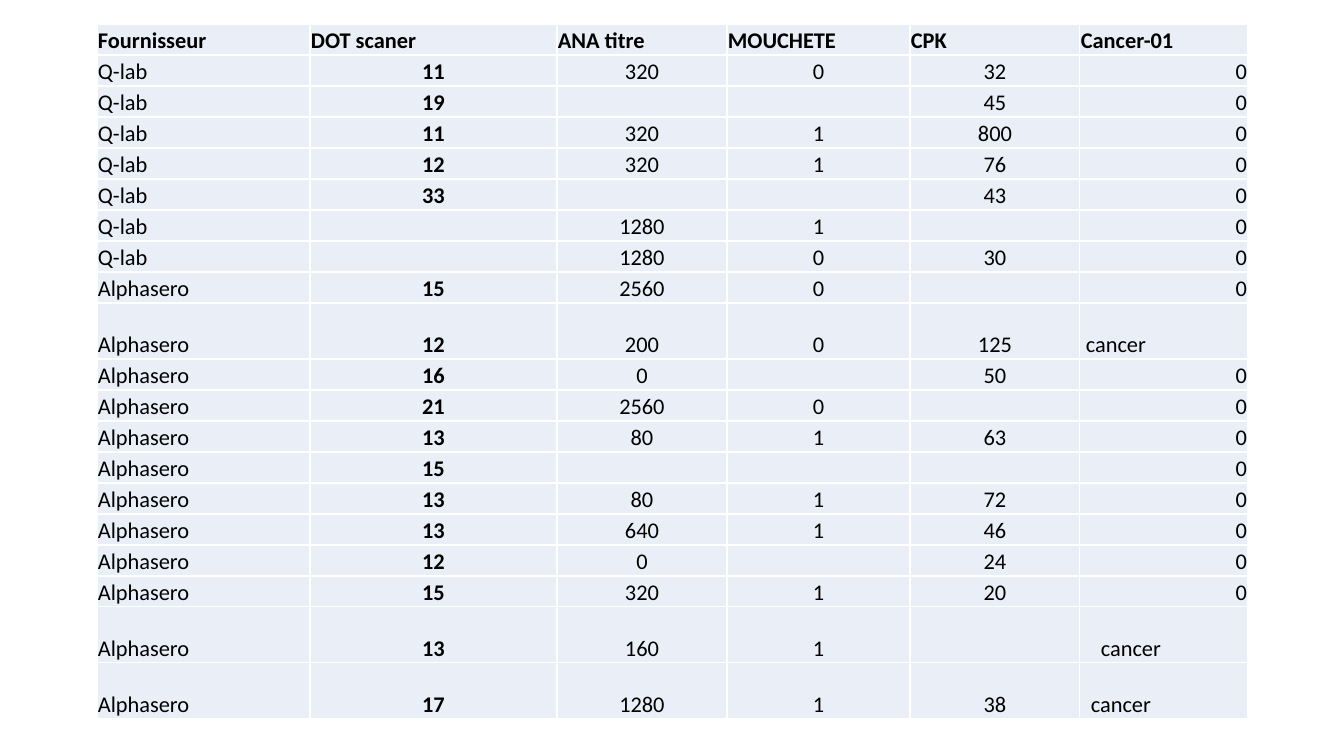
import lxml.etree
import pptx
import pptx.dml.color
import pptx.enum.text
import pptx.oxml.ns
import pptx.util

PX = 914400 / 100.8
BLACK = pptx.dml.color.RGBColor(0, 0, 0)
WHITE = pptx.dml.color.RGBColor(255, 255, 255)
PALE = pptx.dml.color.RGBColor(0xEA, 0xEF, 0xF7)
ALIGN = pptx.enum.text.PP_ALIGN
SIZE = 16

COLS = [213, 247, 170, 183, 170, 168]
LOW, TALL = 31, 56
INDENT = {9: 6, 18: 21, 19: 11}
HEAD = ["Fournisseur", "DOT scaner", "ANA titre", "MOUCHETE", "CPK", "Cancer-01"]
FIRST, SECOND = "Q-lab", "Alphasero"
DATA = [
    [FIRST, "11", "320", "0", "32", "0"],
    [FIRST, "19", "", "", "45", "0"],
    [FIRST, "11", "320", "1", "800", "0"],
    [FIRST, "12", "320", "1", "76", "0"],
    [FIRST, "33", "", "", "43", "0"],
    [FIRST, "", "1280", "1", "", "0"],
    [FIRST, "", "1280", "0", "30", "0"],
    [SECOND, "15", "2560", "0", "", "0"],
    [SECOND, "12", "200", "0", "125", "cancer"],
    [SECOND, "16", "0", "", "50", "0"],
    [SECOND, "21", "2560", "0", "", "0"],
    [SECOND, "13", "80", "1", "63", "0"],
    [SECOND, "15", "", "", "", "0"],
    [SECOND, "13", "80", "1", "72", "0"],
    [SECOND, "13", "640", "1", "46", "0"],
    [SECOND, "12", "0", "", "24", "0"],
    [SECOND, "15", "320", "1", "20", "0"],
    [SECOND, "13", "160", "1", "", "cancer"],
    [SECOND, "17", "1280", "1", "38", "cancer"],
]


def emu(px):
    """Turn pixels into EMU."""
    return pptx.util.Emu(round(px * PX))


def sub(node, tag, **attrs):
    """Append a child element to a node."""
    return lxml.etree.SubElement(node, pptx.oxml.ns.qn(tag), **attrs)


def frame(cell):
    """Give a cell its white borders, pale fill and narrow margins."""
    props = cell._tc.get_or_add_tcPr()
    for side in ("a:lnL", "a:lnR", "a:lnT", "a:lnB"):
        line = sub(props, side, w=str(pptx.util.Pt(1)))
        sub(sub(line, "a:solidFill"), "a:srgbClr", val=str(WHITE))
    cell.fill.solid()
    cell.fill.fore_color.rgb = PALE
    cell.margin_left = cell.margin_right = cell.margin_top = emu(1)
    cell.margin_bottom = 0
    cell.vertical_anchor = pptx.enum.text.MSO_ANCHOR.BOTTOM


def write(cell, text, align, bold):
    """Write one run into a cell, or size the empty line."""
    para = cell.text_frame.paragraphs[0]
    para.alignment = align
    if not text:
        sub(para._p, "a:endParaRPr", sz=str(SIZE * 100))
        return
    run = para.add_run()
    run.text = text
    run.font.name = "Calibri"
    run.font.size = pptx.util.Pt(SIZE)
    run.font.bold = bold
    run.font.color.rgb = BLACK


def grid(slide, left, top):
    """Place the table of results at the given corner."""
    rows = [HEAD] + DATA
    highs = [TALL if i in INDENT else LOW for i in range(len(rows))]
    box = [emu(v) for v in (left, top, sum(COLS), sum(highs))]
    table = slide.shapes.add_table(len(rows), len(COLS), *box).table
    table.first_row = table.horz_banding = False
    for col, wide in zip(table.columns, COLS):
        col.width = emu(wide)
    for row, high in zip(table.rows, highs):
        row.height = emu(high)
    for i, row in enumerate(rows):
        for j, text in enumerate(row):
            cell = table.cell(i, j)
            frame(cell)
            align = ALIGN.CENTER
            if i == 0 or j == 0 or text == "cancer":
                align = ALIGN.LEFT
            elif j == len(COLS) - 1:
                align = ALIGN.RIGHT
            if text == "cancer":
                cell.margin_left = emu(INDENT[i])
            write(cell, text, align, i == 0 or j == 1)


def main():
    """Build and save the slide."""
    deck = pptx.Presentation()
    deck.slide_width, deck.slide_height = emu(1344), emu(756)
    slide = deck.slides.add_slide(deck.slide_layouts[6])
    grid(slide, 97, 24)
    deck.save("out.pptx")


if __name__ == "__main__":
    main()
